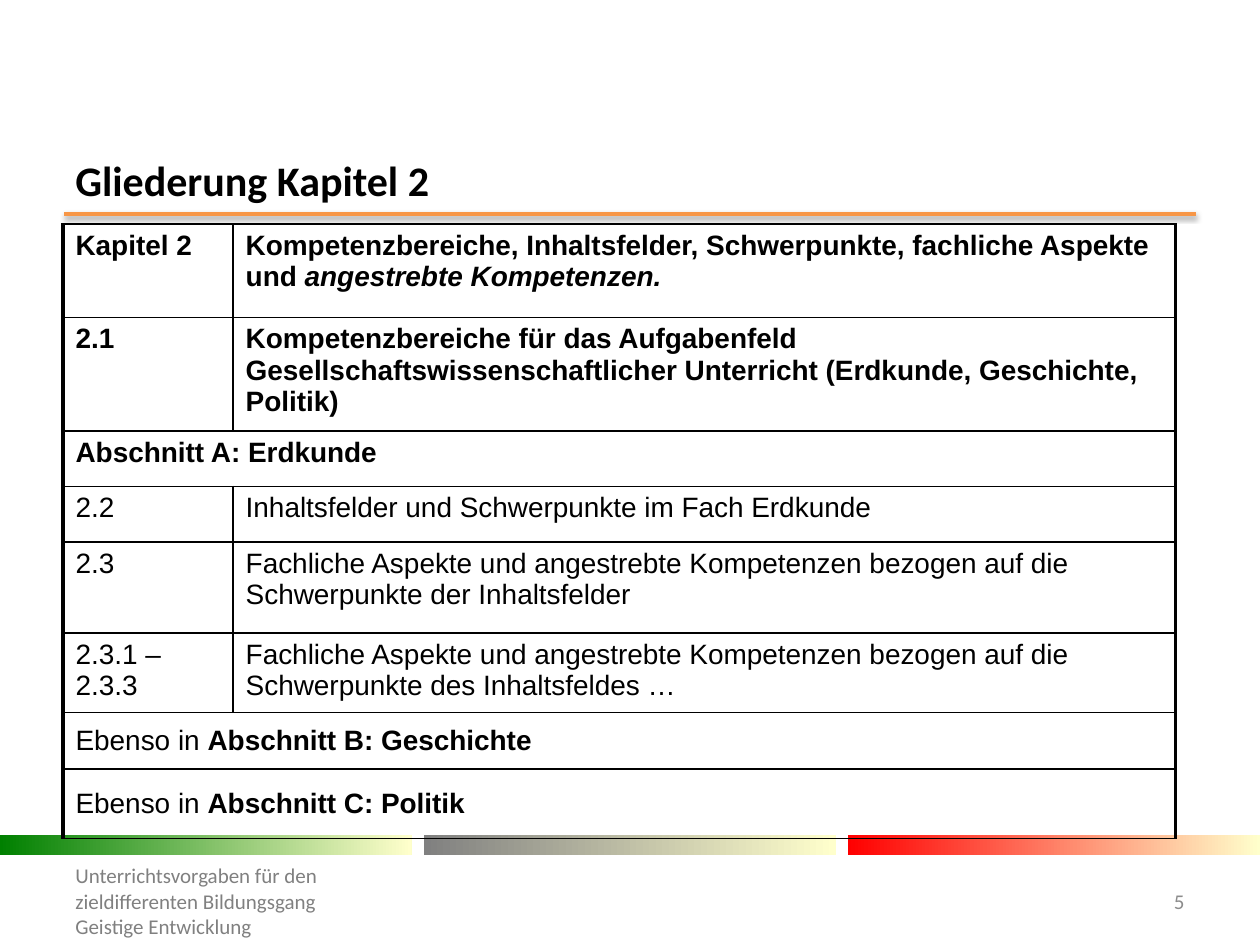
from lxml import etree
from pptx import Presentation
from pptx.dml.color import RGBColor
from pptx.enum.shapes import MSO_CONNECTOR, MSO_SHAPE
from pptx.enum.text import MSO_ANCHOR, PP_ALIGN
from pptx.oxml import parse_xml
from pptx.oxml.ns import nsdecls, qn
from pptx.util import Cm, Pt

RECT = MSO_SHAPE.RECTANGLE
STRAIGHT = MSO_CONNECTOR.STRAIGHT
MIDDLE, TOP = MSO_ANCHOR.MIDDLE, MSO_ANCHOR.TOP
LEFT, RIGHT = PP_ALIGN.LEFT, PP_ALIGN.RIGHT

COLORS = {
    "black": "000000", "footer": "808080", "number": "8C8C8C",
    "rule": "F79646", "green": "008000", "gray": "808080",
    "red": "FF0000", "cream": "FFFFCC",
}
BOLD, ITALIC = "b", "bi"
COL_WIDTHS = [3.43, 19]
ROWS = [
    (1.88, [[("Kapitel 2", BOLD)],
            [("Kompetenzbereiche, Inhaltsfelder, Schwerpunkte, fachliche Aspekte und ", BOLD),
             ("angestrebte Kompetenzen.", ITALIC)]]),
    (2.21, [[("2.1", BOLD)],
            [("Kompetenzbereiche für das Aufgabenfeld Gesellschaftswissenschaftlicher "
              "Unterricht (Erdkunde, Geschichte, Politik)", BOLD)]]),
    (1.12, [[("Abschnitt A: Erdkunde", BOLD)]]),
    (1.12, [[("2.2", "")], [("Inhaltsfelder und Schwerpunkte im Fach Erdkunde", "")]]),
    (1.83, [[("2.3", "")],
            [("Fachliche Aspekte und angestrebte Kompetenzen bezogen auf die "
              "Schwerpunkte der Inhaltsfelder", "")]]),
    (1.57, [[("2.3.1 – 2.3.3", "")],
            [("Fachliche Aspekte und angestrebte Kompetenzen bezogen auf die "
              "Schwerpunkte des Inhaltsfeldes …", "")]]),
    (1.14, [[("Ebenso in ", ""), ("Abschnitt B: Geschichte", BOLD)]]),
    (1.4, [[("Ebenso in ", ""), ("Abschnitt C: Politik", BOLD)]]),
]


def rgb(name):
    """Return the named colour."""
    return RGBColor.from_string(COLORS[name])


def style_font(font, name, size, color, bold=False, italic=False):
    """Set the usual properties of a font."""
    font.name, font.size = name, Pt(size)
    font.bold, font.italic = bold, italic
    font.color.rgb = rgb(color)


def add_text(s, text, left, top, width, height, size, color, bold=False, align=LEFT):
    """Add a vertically centred Calibri text box."""
    tf = s.shapes.add_textbox(Cm(left), Cm(top), Cm(width), Cm(height)).text_frame
    tf.word_wrap = True
    tf.vertical_anchor = MIDDLE
    tf.text = text
    for p in tf.paragraphs:
        p.alignment = align
        for r in p.runs:
            style_font(r.font, "Calibri", size, color, bold)


def add_title_rule(s):
    """Add the shadowed line under the title."""
    line = s.shapes.add_connector(STRAIGHT, Cm(1.3), Cm(4.31), Cm(24.1), Cm(4.31))
    line.line.color.rgb = rgb("rule")
    line.line.width = Pt(2)
    effects = etree.SubElement(line._element.spPr, qn("a:effectLst"))
    shadow = etree.SubElement(effects, qn("a:outerShdw"), blurRad=str(Pt(3.1)),
                              dist=str(Pt(1.6)), dir="5400000", rotWithShape="0")
    color = etree.SubElement(shadow, qn("a:srgbClr"), val=COLORS["black"])
    etree.SubElement(color, qn("a:alpha"), val="38000")


def add_gradient_bar(s, left, color):
    """Add a footer bar that fades from a colour to cream."""
    sp = s.shapes.add_shape(RECT, Cm(left), Cm(16.84), Cm(8.3), Cm(0.4))
    sp.shadow.inherit = False
    sp.line.fill.background()
    sp.fill.gradient()
    sp.fill.gradient_angle = 0
    for stop, name in zip(sp.fill.gradient_stops, (color, "cream")):
        stop.color.rgb = rgb(name)


def set_borders(cell, left, right):
    """Draw black cell borders with the given side widths."""
    tc_pr = cell._tc.get_or_add_tcPr()
    widths = {"lnL": left, "lnR": right, "lnT": 1, "lnB": 1}
    for i, (tag, width) in enumerate(widths.items()):
        tc_pr.insert(i, parse_xml(
            f'<a:{tag} {nsdecls("a")} w="{Pt(width)}"><a:solidFill>'
            f'<a:srgbClr val="{COLORS["black"]}"/></a:solidFill></a:{tag}>'))


def fill_cell(cell, parts, anchor):
    """Write differently styled text parts into a cell."""
    cell.vertical_anchor = anchor
    p = cell.text_frame.paragraphs[0]
    for text, style in parts:
        r = p.add_run()
        r.text = text
        style_font(r.font, "Arial", 16, "black", "b" in style, "i" in style)


def add_outline_table(s):
    """Add the chapter outline, merging rows that hold one entry."""
    height = sum(h for h, _ in ROWS)
    table = s.shapes.add_table(len(ROWS), 2, Cm(1.27), Cm(4.52),
                               Cm(sum(COL_WIDTHS)), Cm(height)).table
    table.first_row = table.horz_banding = False
    for column, width in zip(table.columns, COL_WIDTHS):
        column.width = Cm(width)
    for i, (row_height, entries) in enumerate(ROWS):
        table.rows[i].height = Cm(row_height)
        first, last = table.cell(i, 0), table.cell(i, 1)
        merged = len(entries) == 1
        if merged:
            first.merge(last)
        for cell in (first, last):
            cell.fill.background()
        set_borders(first, 2.25, 2.25 if merged else 1)
        set_borders(last, 1, 2.25)
        for cell, parts in zip((first, last), entries):
            fill_cell(cell, parts, MIDDLE if len(parts) > 1 and merged else TOP)


def main():
    """Build and save the slide."""
    prs = Presentation()
    prs.slide_width, prs.slide_height = Cm(25.4), Cm(19.05)
    s = prs.slides.add_slide(prs.slide_layouts[6])
    add_title_rule(s)
    for i, color in enumerate(("green", "gray", "red")):
        add_gradient_bar(s, i * 8.55, color)
    add_text(s, "Gliederung Kapitel 2", 1.27, 3.12, 22.86, 1, 24, "black", bold=True)
    add_text(s, "Unterrichtsvorgaben für den\nzieldifferenten Bildungsgang\nGeistige Entwicklung",
             1.27, 17.65, 14.63, 1.02, 12, "footer")
    add_text(s, "5", 22.5, 17.65, 1.63, 1.02, 12, "number", align=RIGHT)
    add_outline_table(s)
    prs.save("out.pptx")


if __name__ == "__main__":
    main()
